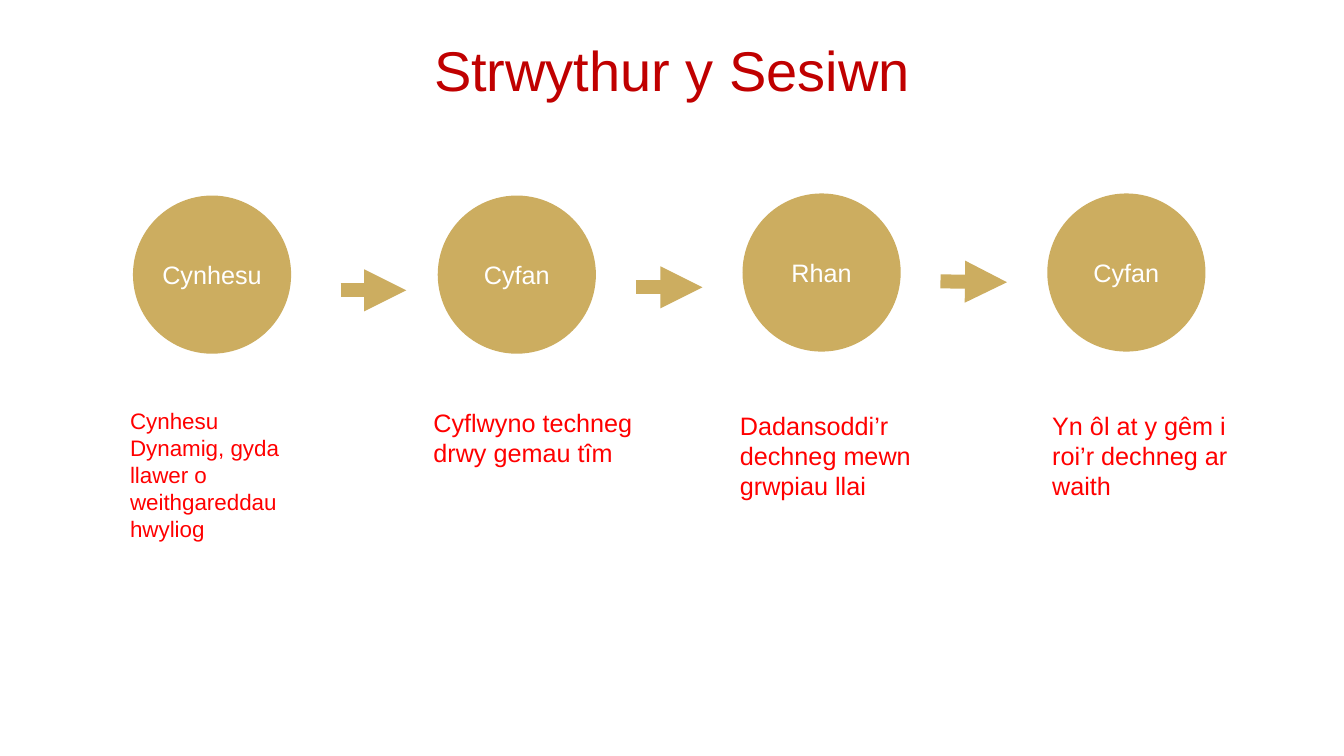
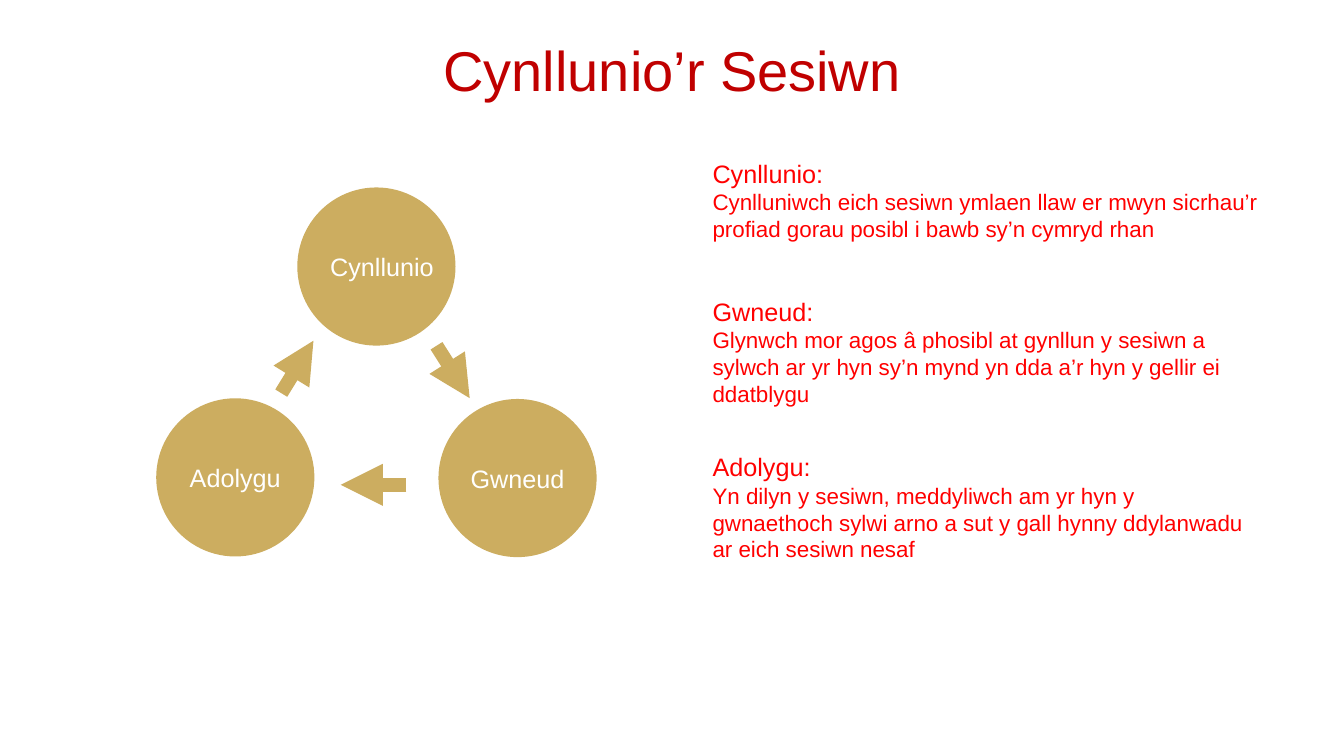
import dataclasses

import pptx
import pptx.dml.color
import pptx.enum.shapes
import pptx.enum.text
import pptx.oxml
import pptx.oxml.ns
import pptx.util

Pt = pptx.util.Pt
RGB = pptx.dml.color.RGBColor.from_string
ALIGN = pptx.enum.text.PP_ALIGN
ANCHOR = pptx.enum.text.MSO_ANCHOR


@dataclasses.dataclass(frozen=True)
class Theme:
    """Colours, font and sizes shared by the slides."""
    title: str = "C00000"
    body: str = "FF0000"
    gold: str = "CCAD60"
    white: str = "FFFFFF"
    font: str = "Arial"
    title_size: int = 40
    label_size: int = 18
    detail_size: int = 16
    inset: float = 3.6
    circle: float = 113
    arrow: float = 10


THEME = Theme()

STEPS = [
    ("Cynhesu", 139.7), ("Cyfan", 139.7), ("Rhan", 138.2), ("Cyfan", 138.2),
]
STEP_LEFT, STEP_PITCH = 95, 217.7
STEP_ARROWS = [
    (243.4, 207.4, 290.2, 207.4),
    (454.3, 205.2, 501.8, 205.2),
    (671.8, 201, 719.3, 201.6),
]
STEP_NOTES = [
    ("Cynhesu Dynamig, gyda llawer o weithgareddau hwyliog",
     (89.3, 287.3, 130.3, 104.4), THEME.detail_size),
    ("Cyflwyno techneg drwy gemau tîm",
     (306, 287.3, 155.5, 51), THEME.label_size),
    ("Dadansoddi’r dechneg mewn grwpiau llai",
     (524.9, 289.4, 159.8, 72.7), THEME.label_size),
    ("Yn ôl at y gêm i roi’r dechneg ar waith",
     (748, 289.4, 146.2, 72.7), THEME.label_size),
]

CYCLE = [
    ("Cynllunio", 212.4, 133.9, 8),
    ("Gwneud", 313.2, 285, 0),
    ("Adolygu", 111.6, 284.5, 0),
]
CYCLE_ARROWS = [
    (311.8, 247, 335.5, 284.4),
    (290.2, 346.3, 243.4, 346.3),
    (200.9, 280.8, 223.9, 243.4),
]
CYCLE_NOTES = [
    ("Cynllunio:", "Cynlluniwch eich sesiwn ymlaen llaw er mwyn sicrhau’r "
     "profiad gorau posibl i bawb sy’n cymryd rhan", (505.4, 109.4, 398.9, 67.7)),
    ("Gwneud:", "Glynwch mor agos â phosibl at gynllun y sesiwn a sylwch ar yr "
     "hyn sy’n mynd yn dda a’r hyn y gellir ei ddatblygu", (505.4, 208, 388.8, 87)),
    ("Adolygu:", "Yn dilyn y sesiwn, meddyliwch am yr hyn y gwnaethoch sylwi arno "
     "a sut y gall hynny ddylanwadu ar eich sesiwn nesaf", (505.4, 319, 388.8, 87)),
]


def write(tf, text, *, size, color, align=ALIGN.LEFT, spacing=None):
    """Write text as the next paragraph of a text frame."""
    p = tf.paragraphs[0]
    if p.runs:
        p = tf.add_paragraph()
    p.alignment = align
    if spacing:
        p.line_spacing = spacing
    r = p.add_run()
    r.text = text
    r.font.name = THEME.font
    r.font.size = Pt(size)
    r.font.color.rgb = RGB(color)


def set_frame(tf, anchor, inset, left=None, wrap=True):
    """Set wrapping, anchor and margins of a text frame."""
    tf.word_wrap = wrap
    tf.vertical_anchor = anchor
    tf.margin_left = Pt(inset if left is None else left)
    tf.margin_right = tf.margin_top = tf.margin_bottom = Pt(inset)


def add_titled_slide(prs, title):
    """Add a title-only slide with its title formatted."""
    s = prs.slides.add_slide(prs.slide_layouts[5])
    sp = s.shapes.title
    sp.left, sp.top, sp.width, sp.height = map(Pt, (66, 27.4, 828, 51.8))
    set_frame(sp.text_frame, ANCHOR.TOP, THEME.inset)
    write(sp.text_frame, title, size=THEME.title_size, color=THEME.title,
          align=ALIGN.CENTER, spacing=0.9)
    return s


def add_circle(s, label, left, top, shift=0):
    """Add a gold circle with a centred white label."""
    sp = s.shapes.add_shape(pptx.enum.shapes.MSO_SHAPE.OVAL, Pt(left), Pt(top),
                            Pt(THEME.circle), Pt(THEME.circle))
    sp.shadow.inherit = False
    sp.fill.solid()
    sp.fill.fore_color.rgb = RGB(THEME.gold)
    sp.line.fill.background()
    set_frame(sp.text_frame, ANCHOR.MIDDLE, 0, left=shift, wrap=False)
    write(sp.text_frame, label, size=THEME.label_size, color=THEME.white,
          align=ALIGN.CENTER)


def add_arrow(s, *ends):
    """Add a thick gold arrow between two points."""
    c = s.shapes.add_connector(pptx.enum.shapes.MSO_CONNECTOR.STRAIGHT,
                               *map(Pt, ends))
    c.line.color.rgb = RGB(THEME.gold)
    c.line.width = Pt(THEME.arrow)
    ln = c.line._get_or_add_ln()
    tail = pptx.oxml.parse_xml(
        f'<a:tailEnd {pptx.oxml.ns.nsdecls("a")} type="triangle"/>')
    ln.append(tail)
    ln.addnext(pptx.oxml.parse_xml(
        f'<a:effectLst {pptx.oxml.ns.nsdecls("a")}/>'))


def add_note(s, box, *lines):
    """Add a red text box holding (text, size) paragraphs."""
    tf = s.shapes.add_textbox(*map(Pt, box)).text_frame
    set_frame(tf, ANCHOR.TOP, THEME.inset)
    for text, size in lines:
        write(tf, text, size=size, color=THEME.body)


def build_structure(prs):
    """Build the row of session steps."""
    s = add_titled_slide(prs, "Strwythur y Sesiwn")
    for i, (label, top) in enumerate(STEPS):
        add_circle(s, label, STEP_LEFT + i * STEP_PITCH, top)
    for ends in STEP_ARROWS:
        add_arrow(s, *ends)
    for text, box, size in STEP_NOTES:
        add_note(s, box, (text, size))


def build_planning(prs):
    """Build the planning cycle and its explanations."""
    s = add_titled_slide(prs, "Cynllunio’r Sesiwn")
    for label, left, top, shift in CYCLE:
        add_circle(s, label, left, top, shift)
    for ends in CYCLE_ARROWS:
        add_arrow(s, *ends)
    for heading, detail, box in CYCLE_NOTES:
        add_note(s, box, (heading, THEME.label_size), (detail, THEME.detail_size))


def main():
    """Build and save the presentation."""
    prs = pptx.Presentation()
    prs.slide_width, prs.slide_height = Pt(960), Pt(540)
    build_structure(prs)
    build_planning(prs)
    prs.save("out.pptx")


if __name__ == "__main__":
    main()
